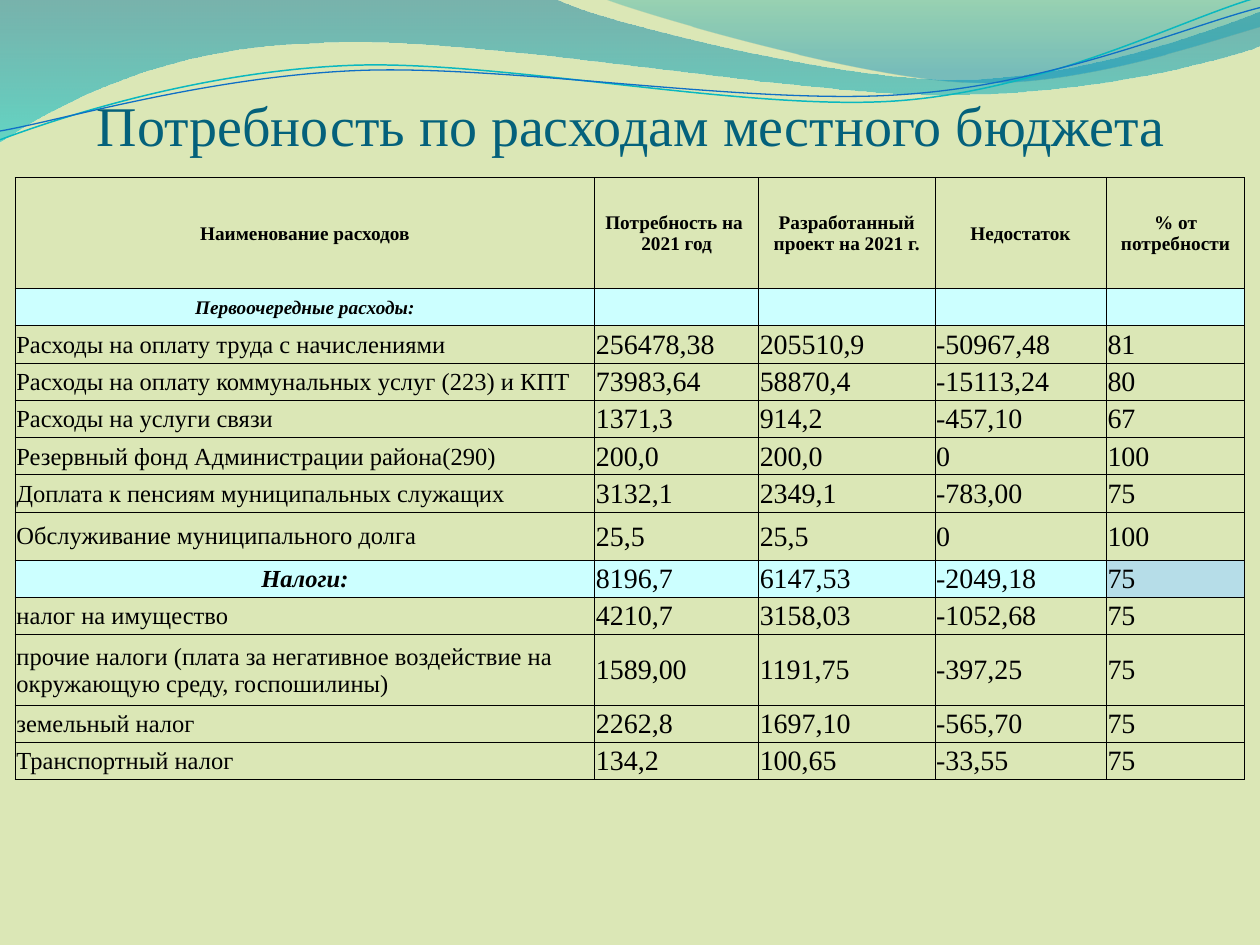
import math

from lxml import etree
from pptx import Presentation
from pptx import util as u
from pptx.dml.color import RGBColor
from pptx.enum import text
from pptx.oxml import ns

FONT, PAPER, AQUA, BLUE = "Times New Roman", "DBE7B6", "CCFFFF", "B6DDE8"
TITLE = "Потребность по расходам местного бюджета"
COLS = [4.6, 1.3, 1.4, 1.36, 1.1]
TABLE_LEFT, TABLE_TOP, TABLE_HEIGHT = 0.12, 1.41, 4.78
TALL_ROWS = {0: 0.88, 7: 0.38, 10: 0.56}
ROWS = [
    ("head", None, ["Наименование расходов", "Потребность на \n2021 год",
                    "Разработанный проект на 2021 г.", "Недостаток", "% от потребности"]),
    ("section", AQUA, ["Первоочередные расходы:", "", "", "", ""]),
    ("item", PAPER, ["Расходы на оплату труда с начислениями", "256478,38", "205510,9", "-50967,48", "81"]),
    ("item", PAPER, ["Расходы на оплату коммунальных услуг (223) и КПТ", "73983,64", "58870,4", "-15113,24", "80"]),
    ("item", PAPER, ["Расходы на услуги связи", "1371,3", "914,2", "-457,10", "67"]),
    ("item", PAPER, ["Резервный фонд Администрации района(290)", "200,0", "200,0", "0", "100"]),
    ("item", PAPER, ["Доплата к пенсиям муниципальных служащих", "3132,1", "2349,1", "-783,00", "75"]),
    ("item", PAPER, ["Обслуживание муниципального долга", "25,5", "25,5", "0", "100"]),
    ("total", AQUA, ["Налоги:", "8196,7", "6147,53", "-2049,18", "75"]),
    ("item", None, ["налог на имущество", "4210,7", "3158,03", "-1052,68", "75"]),
    ("item", None, ["прочие налоги (плата за негативное воздействие на окружающую среду, госпошилины)",
                    "1589,00", "1191,75", "-397,25", "75"]),
    ("item", None, ["земельный налог", "2262,8", "1697,10", "-565,70", "75"]),
    ("item", None, ["Транспортный налог", "134,2", "100,65", "-33,55", "75"]),
]
SPECIAL_FILLS = {(8, 4): BLUE}
HEAD = {"size": u.Pt(11), "bold": True, "italic": False}
NUMBER = {"size": u.Pt(16), "bold": False, "italic": False}
LABELS = {
    "head": HEAD,
    "section": {**HEAD, "italic": True},
    "item": {**NUMBER, "size": u.Pt(14)},
    "total": {"size": u.Pt(14), "bold": True, "italic": True},
}
WAVES = [
    ((-0.01, -0.01, 10.02, 1.14),
     [(0, 0), (4.4, -0.01), (4.76, 0.17, 6.64, 0.63, 7.58, 0.63), (8.53, 0.63, 9.58, 0.26, 10, 0.09),
      (10.01, 0.36), (9.83, 0.44, 8.7, 0.76, 7.46, 0.75), (6.22, 0.75, 3.82, 0.28, 2.57, 0.34),
      (1.29, 0.36, 0.46, 0.83, -0.01, 1.13), (0, 0)], [(0, "0074A1", 45), (1, "00C6CF", 55)]),
    ((4.79, -0.01, 5.21, 0.7),
     [(4.79, -0.01), (5.09, 0.11, 6.82, 0.62, 7.69, 0.65), (8.56, 0.69, 9.61, 0.32, 10, 0.21),
      (10, 0), (4.79, -0.01)], [(0, "00A1A9", 30), (0.8, "008BBF", 45)]),
]
STRAND_TURN = -2.7
STRANDS = [
    ((-0.02, 0.22, 10.02, 0.71),
     [(0, 1.11), (0.48, 0.93, 1.58, 0.57, 2.77, 0.52), (3.95, 0.47, 5.93, 0.89, 7.13, 0.8),
      (8.33, 0.71, 9.38, 0.15, 9.98, -0.02)], "0AB8BF", 0.85),
    ((-0.02, 0.3, 10.03, 0.58),
     [(0, 1.04), (0.47, 0.96, 1.64, 0.61, 2.83, 0.56), (4.03, 0.51, 5.97, 0.84, 7.17, 0.75),
      (8.36, 0.67, 9.41, 0.21, 10, 0.06)], "0F6FC6", 0.75),
]


def rgb(value):
    """Turn a hex string into a colour."""
    return RGBColor.from_string(value)


def style(obj, values):
    """Set every attribute in values on obj."""
    for name, value in values.items():
        setattr(obj, name, value)


def add_outline(slide, box, steps, turn=0, close=False):
    """Draw a freeform of lines and cubic curves in a box that may be turned."""
    left, top, width, height = box
    cos, sin = math.cos(math.radians(-turn)), math.sin(math.radians(-turn))

    def local(x, y):
        """Place a slide point inside the unturned box."""
        dx, dy = x - left - width / 2, y - top - height / 2
        return u.Inches(dx * cos - dy * sin + width / 2), u.Inches(dx * sin + dy * cos + height / 2)

    corners = [local(*step[-2:]) for step in steps]
    builder = slide.shapes.build_freeform(*corners[0], scale=1.0)
    builder.add_line_segments(corners[1:], close=close)
    s = builder.convert_to_shape()
    s.shadow.inherit = False
    style(s, dict(zip(("left", "top", "width", "height"), map(u.Inches, box)), rotation=turn % 360))
    outline = next(s._element.iter(ns.qn("a:path")))
    for side, size in (("w", width), ("h", height)):
        outline.set(side, str(u.Inches(size)))
    for node, step in zip(list(outline), steps):
        for point in list(node):
            node.remove(point)
        if len(step) == 6:
            curve = etree.Element(ns.qn("a:cubicBezTo"))
            outline.replace(node, curve)
            node = curve
        for x, y in zip(step[::2], step[1::2]):
            px, py = local(x, y)
            etree.SubElement(node, ns.qn("a:pt"), x=str(px), y=str(py))
    return s


def add_wave(slide, box, steps, stops):
    """Draw a closed wave with a see-through vertical gradient."""
    s = add_outline(slide, box, steps, close=True)
    s.line.fill.background()
    s.fill.gradient()
    s.fill.gradient_angle = 270
    for stop, (position, color, _) in zip(s.fill.gradient_stops, stops):
        stop.position = position
        stop.color.rgb = rgb(color)
    for node, (_, _, opacity) in zip(s._element.spPr.iter(ns.qn("a:srgbClr")), stops):
        etree.SubElement(node, ns.qn("a:alpha"), val=str(opacity * 1000))


def add_strand(slide, box, steps, color, width):
    """Draw an open curved line."""
    s = add_outline(slide, box, steps, STRAND_TURN)
    s.fill.background()
    s.line.color.rgb = rgb(color)
    s.line.width = u.Pt(width)


def add_title(slide):
    """Add the slide heading."""
    tf = slide.shapes.add_textbox(*map(u.Inches, (0.47, 0, 9.08, 1.25))).text_frame
    style(tf, {"word_wrap": True, "vertical_anchor": text.MSO_ANCHOR.BOTTOM, "margin_left": 0,
               "margin_top": u.Inches(0.05), "margin_right": 0, "margin_bottom": 0})
    p = tf.paragraphs[0]
    p.alignment = text.PP_ALIGN.CENTER
    r = p.add_run()
    r.text = TITLE
    style(r.font, {"name": FONT, "size": u.Pt(32)})
    r.font.color.rgb = rgb("04617B")


def add_borders(cell):
    """Give a cell thin black borders, ahead of its fill."""
    props = cell._tc.get_or_add_tcPr()
    for i, side in enumerate(("lnL", "lnR", "lnT", "lnB")):
        line = etree.Element(ns.qn("a:" + side), w=str(u.Pt(0.5)))
        fill = etree.SubElement(line, ns.qn("a:solidFill"))
        etree.SubElement(fill, ns.qn("a:srgbClr"), val="000000")
        props.insert(i, line)


def fill_cell(cell, words, font, centred, color):
    """Write and format one cell."""
    edge = u.Inches(0.01)
    style(cell, {"text": words, "vertical_anchor": text.MSO_ANCHOR.MIDDLE, "margin_left": edge,
                 "margin_top": edge, "margin_right": edge, "margin_bottom": 0})
    if color:
        cell.fill.solid()
        cell.fill.fore_color.rgb = rgb(color)
    else:
        cell.fill.background()
    add_borders(cell)
    for p in cell.text_frame.paragraphs:
        p.alignment = text.PP_ALIGN.CENTER if centred else text.PP_ALIGN.LEFT
        for r in p.runs:
            style(r.font, {"name": FONT, **font})
            r.font.color.rgb = rgb("000000")
        if not p.runs:
            etree.SubElement(p._p, ns.qn("a:endParaRPr"), sz=str(font["size"].centipoints))


def add_budget(slide):
    """Add the table of expenses."""
    plain = (TABLE_HEIGHT - sum(TALL_ROWS.values())) / (len(ROWS) - len(TALL_ROWS))
    box = map(u.Inches, (TABLE_LEFT, TABLE_TOP, sum(COLS), TABLE_HEIGHT))
    table = slide.shapes.add_table(len(ROWS), len(COLS), *box).table
    style(table, {"first_row": False, "horz_banding": False})
    for column, width in zip(table.columns, COLS):
        column.width = u.Inches(width)
    for i, (kind, color, words) in enumerate(ROWS):
        table.rows[i].height = u.Inches(TALL_ROWS.get(i, plain))
        for j, word in enumerate(words):
            font = LABELS[kind] if j == 0 or kind in ("head", "section") else NUMBER
            centred = kind == "head" or (j == 0 and kind != "item")
            fill_cell(table.cell(i, j), word, font, centred, SPECIAL_FILLS.get((i, j), color))


prs = Presentation()
prs.slide_width, prs.slide_height = u.Inches(10), u.Inches(7.5)
slide = prs.slides.add_slide(prs.slide_layouts[6])
slide.background.fill.solid()
slide.background.fill.fore_color.rgb = rgb(PAPER)
for wave in WAVES:
    add_wave(slide, *wave)
for strand in STRANDS:
    add_strand(slide, *strand)
add_title(slide)
add_budget(slide)
prs.save("out.pptx")
